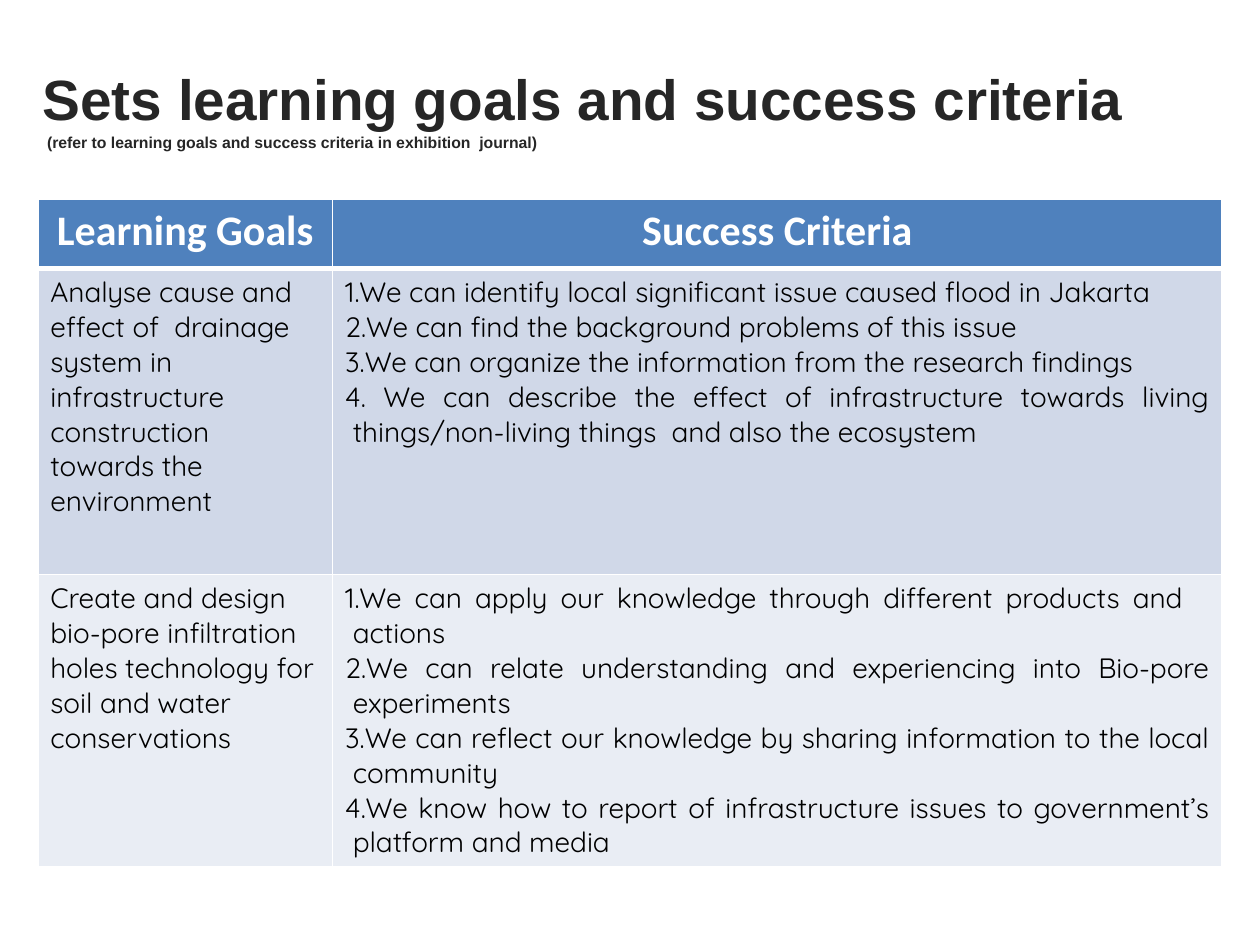
from lxml import etree
from pptx import Presentation
from pptx.dml.color import RGBColor
from pptx.enum.text import MSO_ANCHOR, PP_ALIGN
from pptx.oxml.ns import qn
from pptx.util import Inches, Pt

LEFT, CENTER, JUSTIFY = PP_ALIGN.LEFT, PP_ALIGN.CENTER, PP_ALIGN.JUSTIFY
MIDDLE = MSO_ANCHOR.MIDDLE

COLORS = {
    "title": "262626",
    "header": "4F81BD",
    "band_dark": "D0D8E8",
    "band_light": "E9EDF4",
    "white": "FFFFFF",
    "black": "000000",
}

HEADERS = ["Learning Goals", "Success Criteria"]
GOALS = [
    (
        "Analyse cause and effect of  drainage system in infrastructure "
        "construction towards the environment",
        [
            "We can identify local significant issue caused flood in Jakarta",
            "We can find the background problems of this issue",
            "We can organize the information from the research findings",
            " We can describe the effect of infrastructure towards living "
            "things/non-living things  and also the ecosystem",
        ],
    ),
    (
        "Create and design bio-pore infiltration holes technology for soil "
        "and water conservations",
        [
            "We can apply our knowledge through different products and   actions",
            "We can relate understanding and experiencing into Bio-pore experiments",
            "We can reflect our knowledge by sharing information to the local community",
            "We know how to report of infrastructure issues to government’s "
            "platform and media",
        ],
    ),
]


class SlideBuilder:
    def __init__(self, slide):
        self.slide = slide
        self.title_font = "Arial"
        self.header_font = "Calibri"
        self.body_font = "Quicksand"

    def style(self, r, font, size, color, bold=False):
        r.font.name = font
        r.font.size = Pt(size)
        r.font.bold = bold
        r.font.color.rgb = RGBColor.from_string(COLORS[color])

    def title(self, heading, note, left, top, width, height):
        sp = self.slide.shapes.add_textbox(
            Inches(left), Inches(top), Inches(width), Inches(height))
        tf = sp.text_frame
        tf.word_wrap = True
        tf.vertical_anchor = MIDDLE
        p = tf.paragraphs[0]
        p.text = f"{heading}\v{note}"
        for r, size in zip(p.runs, (32.4, 9)):
            self.style(r, self.title_font, size, "title", True)

    def table(self, left, top, widths, heights):
        frame = self.slide.shapes.add_table(
            len(heights), len(widths), Inches(left), Inches(top),
            Inches(sum(widths)), Inches(sum(heights)))
        tbl = frame.table
        for col, width in zip(tbl.columns, widths):
            col.width = Inches(width)
        for row, height in zip(tbl.rows, heights):
            row.height = Inches(height)
        return tbl

    def borders(self, cell, top, bottom):
        tc_pr = cell._tc.get_or_add_tcPr()
        for side, width in (("L", 1), ("R", 1), ("T", top), ("B", bottom)):
            ln = etree.SubElement(tc_pr, qn(f"a:ln{side}"), w=str(Pt(width)))
            fill = etree.SubElement(ln, qn("a:solidFill"))
            etree.SubElement(fill, qn("a:srgbClr"), val=COLORS["white"])

    def number(self, p):
        p_pr = p._p.get_or_add_pPr()
        p_pr.set("marL", str(Inches(0.06)))
        p_pr.set("indent", str(Inches(-0.06)))
        etree.SubElement(p_pr, qn("a:buFont"), typeface="+mj-lt")
        etree.SubElement(p_pr, qn("a:buAutoNum"), type="arabicPeriod")

    def cell(self, cell, lines, fill, align=LEFT, header=False, numbered=False,
             top=1, bottom=1):
        self.borders(cell, top, bottom)
        cell.fill.solid()
        cell.fill.fore_color.rgb = RGBColor.from_string(COLORS[fill])
        tf = cell.text_frame
        tf.text = "\n".join(lines)
        for p in tf.paragraphs:
            p.alignment = align
            if numbered:
                self.number(p)
            for r in p.runs:
                if header:
                    self.style(r, self.header_font, 24, "white", True)
                else:
                    self.style(r, self.body_font, 16, "black")


def main():
    prs = Presentation()
    prs.slide_width = Inches(10)
    prs.slide_height = Inches(7.5)
    s = SlideBuilder(prs.slides.add_slide(prs.slide_layouts[6]))

    s.title("Sets learning goals and success criteria",
            " (refer to learning goals and success criteria in exhibition  journal)",
            0.24, 0.23, 9.52, 1.25)

    tbl = s.table(0.3, 1.58, [2.34, 7.06], [0.55, 2.43, 2.32])
    for col, text in enumerate(HEADERS):
        s.cell(tbl.cell(0, col), [text], "header", CENTER, header=True, bottom=3)
    bands = ("band_dark", "band_light")
    for row, ((goal, criteria), band) in enumerate(zip(GOALS, bands), 1):
        top = 3 if row == 1 else 1
        s.cell(tbl.cell(row, 0), [goal], band, top=top)
        s.cell(tbl.cell(row, 1), criteria, band, JUSTIFY, numbered=True, top=top)

    prs.save("out.pptx")


if __name__ == "__main__":
    main()
